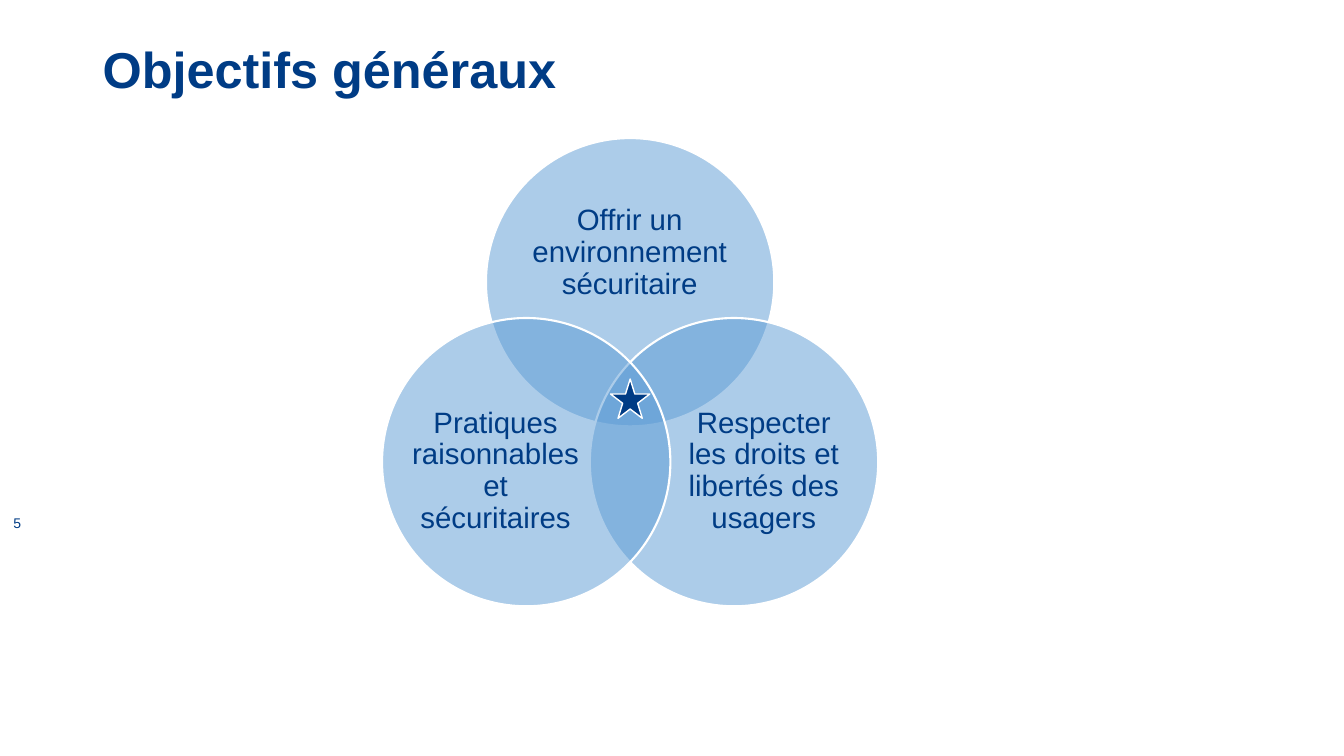
from math import cos, radians, sin

from lxml.etree import SubElement
from pptx import Presentation
from pptx.dml.color import RGBColor
from pptx.enum.shapes import MSO_SHAPE
from pptx.enum.text import MSO_ANCHOR, PP_ALIGN
from pptx.oxml.ns import qn
from pptx.util import Inches, Pt

TITLE = "Objectifs généraux"
PAGE_NUMBER = "5"
GOALS = [
    ("Offrir un environnement sécuritaire", -90, (5.2, 1.87, 2.09, 1.28)),
    ("Respecter les droits et libertés des usagers", 30, (6.72, 3.89, 1.71, 1.57)),
    ("Pratiques raisonnables et sécuritaires", 150, (4.06, 3.89, 1.71, 1.57)),
]
NAVY, BLUE, WHITE = "003C85", "5B9BD5", "FFFFFF"
CENTER_X, CENTER_Y = 6.25, 3.99
ORBIT, DIAMETER = 1.19, 2.86
STAR_Y, STAR_SIZE = 3.955, 0.39


def color(value):
    return RGBColor.from_string(value)


def add_text(page, text, place, size, anchor, align, spacing=1.0, margin=None, bold=False):
    box = page.shapes.add_textbox(*map(Inches, place))
    frame = box.text_frame
    frame.word_wrap = True
    frame.vertical_anchor = anchor
    if margin is not None:
        frame.margin_left = frame.margin_right = Inches(margin)
        frame.margin_top = frame.margin_bottom = Inches(margin)
    para = frame.paragraphs[0]
    para.alignment = align
    para.line_spacing = spacing
    span = para.add_run()
    span.text = text
    span.font.name = "Arial"
    span.font.size = Pt(size)
    span.font.bold = bold
    span.font.color.rgb = color(NAVY)


def add_figure(page, kind, x, y, size, fill, line_width, opacity=100):
    figure = page.shapes.add_shape(
        kind, Inches(x - size / 2), Inches(y - size / 2), Inches(size), Inches(size)
    )
    figure.shadow.inherit = False
    figure.fill.solid()
    figure.fill.fore_color.rgb = color(fill)
    figure.line.color.rgb = color(WHITE)
    figure.line.width = Pt(line_width)
    if opacity < 100:
        tint = figure.fill._xPr.find(qn("a:solidFill"))[0]
        SubElement(tint, qn("a:alpha")).set("val", str(opacity * 1000))


def main():
    deck = Presentation()
    deck.slide_width, deck.slide_height = Inches(13.33), Inches(7.5)
    page = deck.slides.add_slide(deck.slide_layouts[6])

    add_text(page, TITLE, (0.92, 0.4, 11.5, 1.45), 36, MSO_ANCHOR.TOP, PP_ALIGN.LEFT,
             spacing=0.9, bold=True)
    for label, angle, place in GOALS:
        x = CENTER_X + ORBIT * cos(radians(angle))
        y = CENTER_Y + ORBIT * sin(radians(angle))
        add_figure(page, MSO_SHAPE.OVAL, x, y, DIAMETER, BLUE, 1.5, opacity=50)
        add_text(page, label, place, 21, MSO_ANCHOR.MIDDLE, PP_ALIGN.CENTER,
                 spacing=0.9, margin=0)
    add_text(page, PAGE_NUMBER, (0, 4.99, 0.34, 0.4), 10, MSO_ANCHOR.MIDDLE, PP_ALIGN.CENTER)
    add_figure(page, MSO_SHAPE.STAR_5_POINT, CENTER_X, STAR_Y, STAR_SIZE, NAVY, 1)

    deck.save("out.pptx")


if __name__ == "__main__":
    main()
